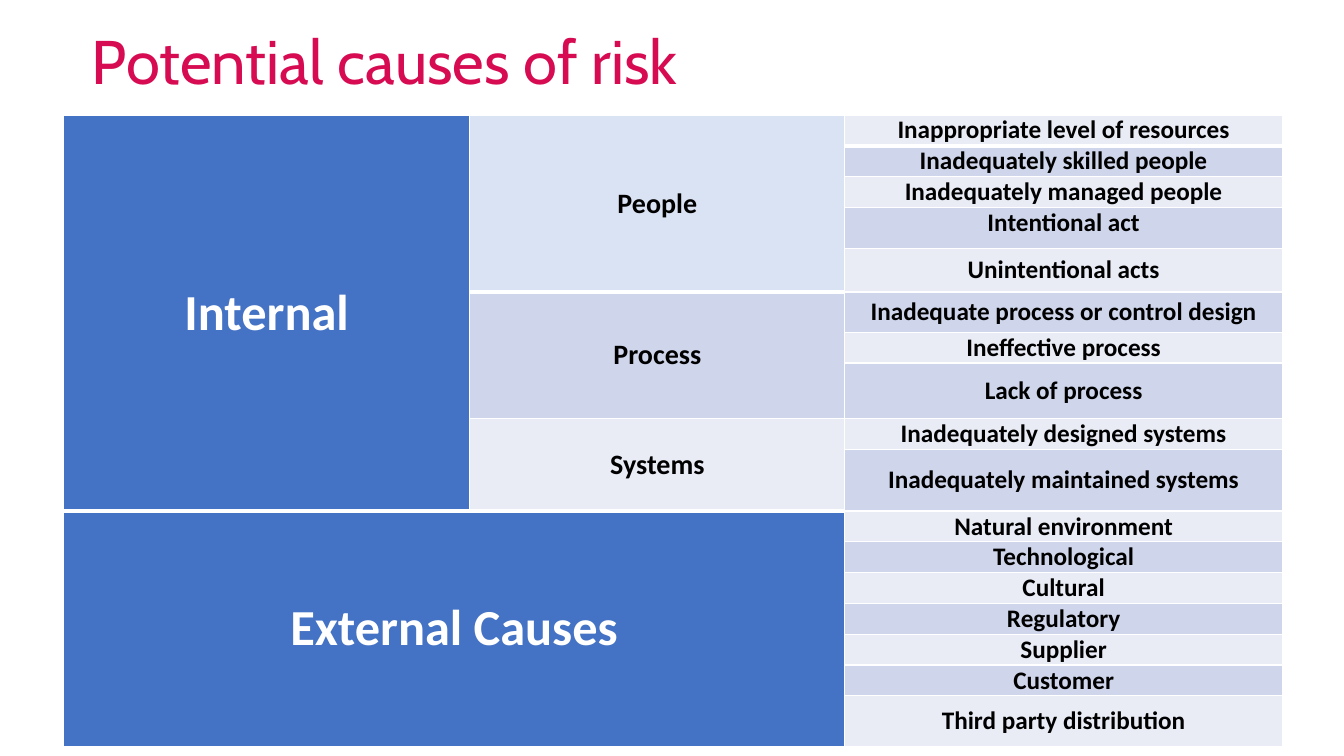
from lxml import etree
from pptx import Presentation
from pptx.dml.color import RGBColor
from pptx.enum.text import MSO_ANCHOR, PP_ALIGN
from pptx.oxml.ns import qn
from pptx.util import Inches, Pt

WHITE = RGBColor(0xFF, 0xFF, 0xFF)
BLACK = RGBColor(0, 0, 0)
CRIMSON = RGBColor(0xD6, 0x0B, 0x52)
BLUE = RGBColor(0x44, 0x72, 0xC4)
PALE_BLUE = RGBColor(0xDA, 0xE3, 0xF3)
LIGHT_BAND = RGBColor(0xE9, 0xEB, 0xF5)
DARK_BAND = RGBColor(0xCF, 0xD5, 0xEA)

COLUMN_WIDTHS = [4.03, 3.72, 4.34]
LINE_ROW = 0.3

# Each cause with its row height
CAUSES = [
    ("Inappropriate level of resources", LINE_ROW),
    ("Inadequately skilled people", LINE_ROW),
    ("Inadequately managed people", LINE_ROW),
    ("Intentional act", 0.41),
    ("Unintentional acts", 0.43),
    ("Inadequate process or control design", 0.4),
    ("Ineffective process", LINE_ROW),
    ("Lack of process", 0.55),
    ("Inadequately designed systems", LINE_ROW),
    ("Inadequately maintained systems", 0.61),
    ("Natural environment", LINE_ROW),
    ("Technological", LINE_ROW),
    ("Cultural", LINE_ROW),
    ("Regulatory", LINE_ROW),
    ("Supplier", LINE_ROW),
    ("Customer", LINE_ROW),
    ("Third party distribution", 0.5),
]

# Merged groups: text, first cell, last cell, fill, size, colour
GROUPS = [
    ("Internal", (0, 0), (9, 0), BLUE, 36, WHITE),
    ("People", (0, 1), (4, 1), PALE_BLUE, 20, BLACK),
    ("Process", (5, 1), (7, 1), DARK_BAND, 20, BLACK),
    ("Systems", (8, 1), (9, 1), LIGHT_BAND, 20, BLACK),
    ("External Causes", (10, 0), (16, 1), BLUE, 36, WHITE),
]
# Cells that lie just below a first-row cell
HEAVY_TOPS = {(1, 2), (5, 1), (10, 0)}


class SlideBuilder:
    title_font = "Cabin"
    table_font = "Calibri"

    def __init__(self, deck):
        self.page = deck.slides.add_slide(deck.slide_layouts[5])

    def title(self, text, left, top, width, height):
        box = self.page.shapes.title
        box.left, box.top = Inches(left), Inches(top)
        box.width, box.height = Inches(width), Inches(height)
        frame = box.text_frame
        frame.text = text
        frame.word_wrap = True
        frame.vertical_anchor = MSO_ANCHOR.MIDDLE
        para = frame.paragraphs[0]
        para.alignment = PP_ALIGN.LEFT
        para.line_spacing = 0.9
        font = para.runs[0].font
        font.name, font.size = self.title_font, Pt(44)
        font.color.rgb = CRIMSON

    def table(self, left, top, widths, heights):
        frame = self.page.shapes.add_table(
            len(heights), len(widths), Inches(left), Inches(top),
            Inches(sum(widths)), Inches(sum(heights)))
        table = frame.table
        for column, width in zip(table.columns, widths):
            column.width = Inches(width)
        for row, height in zip(table.rows, heights):
            row.height = Inches(height)
        for cell in table.iter_cells():
            cell.margin_left = cell.margin_right = Inches(0.05)
            cell.margin_top = cell.margin_bottom = 0
        return table

    def cell(self, table, row, column, text, fill, size, color):
        cell = table.cell(row, column)
        cell.vertical_anchor = MSO_ANCHOR.MIDDLE
        cell.text = text
        para = cell.text_frame.paragraphs[0]
        para.alignment = PP_ALIGN.CENTER
        font = para.runs[0].font
        font.name, font.size, font.bold = self.table_font, Pt(size), True
        font.color.rgb = color
        self.borders(cell, heavy_top=(row, column) in HEAVY_TOPS,
                     heavy_bottom=row == 0)
        cell.fill.solid()
        cell.fill.fore_color.rgb = fill
        return cell

    def borders(self, cell, heavy_top, heavy_bottom):
        properties = cell._tc.get_or_add_tcPr()
        widths = {"L": 1, "R": 1, "T": 3 if heavy_top else 1,
                  "B": 3 if heavy_bottom else 1}
        for side, width in widths.items():
            line = etree.SubElement(properties, qn(f"a:ln{side}"), w=str(Pt(width)))
            solid = etree.SubElement(line, qn("a:solidFill"))
            etree.SubElement(solid, qn("a:srgbClr"), val=str(WHITE))


def main():
    deck = Presentation()
    deck.slide_width, deck.slide_height = Inches(13.33), Inches(7.5)
    slide = SlideBuilder(deck)

    # Table of causes
    table = slide.table(0.63, 1.14, COLUMN_WIDTHS, [height for _, height in CAUSES])
    for text, first, last, fill, size, color in GROUPS:
        table.cell(*first).merge(table.cell(*last))
        slide.cell(table, *first, text, fill, size, color)
    for row, (text, _) in enumerate(CAUSES):
        band = DARK_BAND if row % 2 else LIGHT_BAND
        cell = slide.cell(table, row, 2, text, band, 18, BLACK)
        if text == "Intentional act":
            cell.vertical_anchor = MSO_ANCHOR.TOP

    # Heading
    slide.title("Potential causes of risk", 0.81, 0.13, 11.43, 1.02)

    deck.save("out.pptx")


if __name__ == "__main__":
    main()
